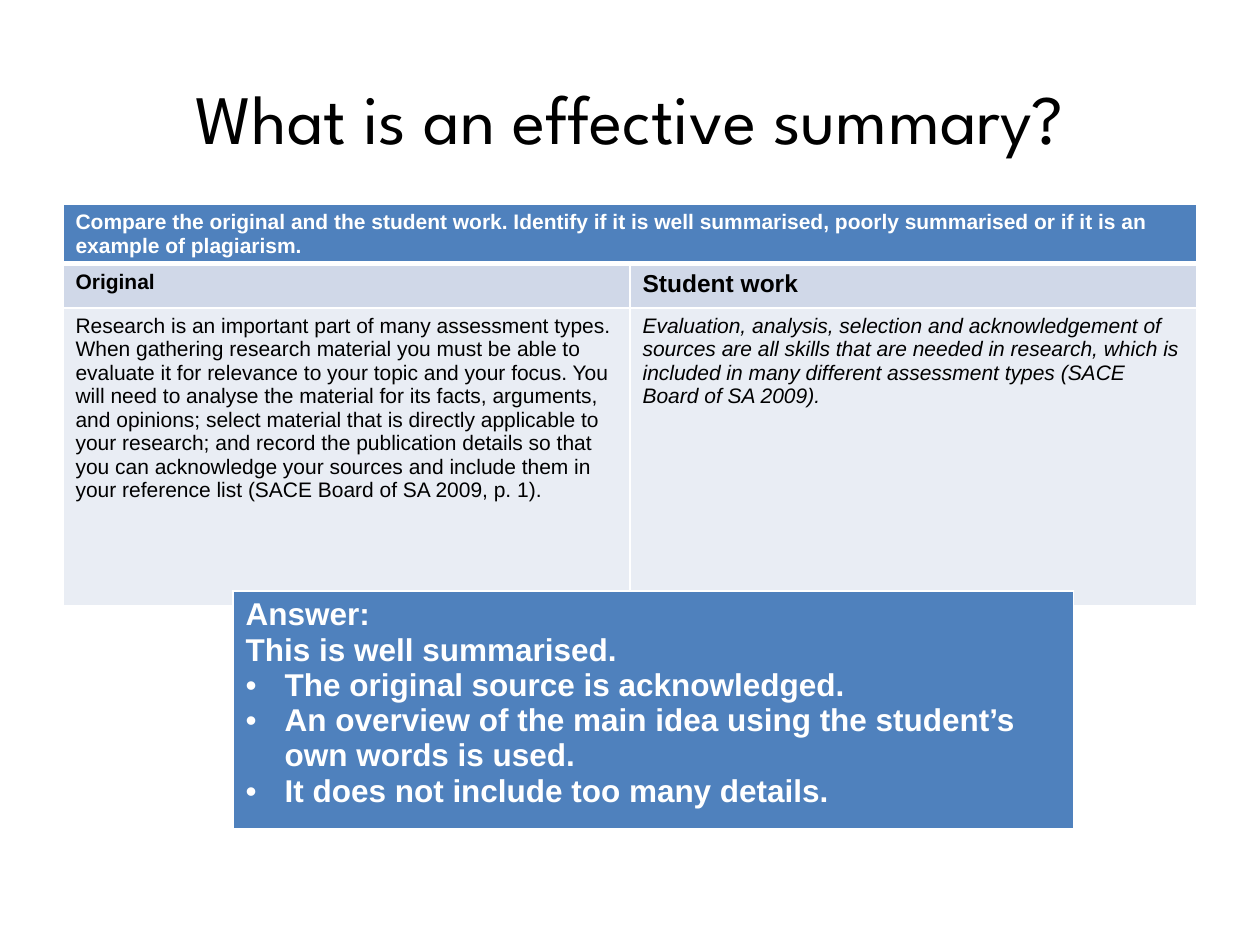
from lxml.etree import SubElement
from pptx import Presentation
from pptx.dml.color import RGBColor
from pptx.enum.text import MSO_ANCHOR as Anchor, PP_ALIGN as Align
from pptx.oxml.ns import qn
from pptx.util import Emu, Inches, Pt

COLORS = {"ink": "000000", "paper": "FFFFFF", "header": "4F81BD",
          "label": "D0D8E8", "body": "E9EDF4"}
CELL = Inches(0.1)
COLUMNS, ROWS = 100, 75

TITLE = "What is an effective summary?"
TASK = ("Compare the original and the student work. Identify if it is well summarised, "
        "poorly summarised or if it is an example of plagiarism.")
ORIGINAL = ("Research is an important part of many assessment types. When gathering research "
            "material you must be able to evaluate it for relevance to your topic and your focus. "
            "You will need to analyse the material for its facts, arguments, and opinions; select "
            "material that is directly applicable to your research; and record the publication "
            "details so that you can acknowledge your sources and include them in your reference "
            "list (SACE Board of SA 2009, p. 1).")
STUDENT_WORK = ("Evaluation, analysis, selection and acknowledgement of sources are all skills "
                "that are needed in research, which is included in many different assessment "
                "types (SACE Board of SA 2009).")
VERDICT = ["Answer:", "This is well summarised."]
REASONS = ["The original source is acknowledged.",
           "An overview of the main idea using the student’s own words is used.",
           "It does not include too many details."]


def grid(*units):
    """Turn grid units into slide lengths."""
    return [Emu(round(unit * CELL)) for unit in units]


def style_font(font, color, **values):
    """Apply format values and a named colour to a font."""
    for name, value in values.items():
        setattr(font, name, value)
    font.color.rgb = RGBColor.from_string(COLORS[color])


def add_bullet(paragraph):
    """Give a paragraph a hanging bullet."""
    properties = paragraph._p.get_or_add_pPr()
    properties.set("marL", str(Inches(0.31)))
    properties.set("indent", str(-Inches(0.31)))
    SubElement(properties, qn("a:buFont")).set("typeface", "Arial")
    SubElement(properties, qn("a:buChar")).set("char", "•")


def paint_cell(cell, fill, top=1, bottom=1):
    """Draw white borders around a cell and fill it."""
    properties = cell._tc.get_or_add_tcPr()
    for side, width in {"L": 1, "R": 1, "T": top, "B": bottom}.items():
        border = SubElement(properties, qn(f"a:ln{side}"), w=str(Pt(width)))
        SubElement(SubElement(border, qn("a:solidFill")), qn("a:srgbClr"), val=COLORS["paper"])
    cell.fill.solid()
    cell.fill.fore_color.rgb = RGBColor.from_string(COLORS[fill])


def add_plain_table(slide, box, row_heights, column_count):
    """Add a table without banding, with equal columns and the given rows."""
    table = slide.shapes.add_table(len(row_heights), column_count, *grid(*box)).table
    table.first_row = table.horz_banding = False
    for row, height in zip(table.rows, grid(*row_heights)):
        row.height = height
    return table


def add_title(slide, box):
    """Place the centred slide title."""
    frame = slide.shapes.add_textbox(*grid(*box)).text_frame
    frame.word_wrap = True
    frame.vertical_anchor = Anchor.MIDDLE
    heading = frame.paragraphs[0]
    heading.text = TITLE
    heading.alignment = Align.CENTER
    style_font(heading.font, "ink", name="League Spartan", size=Pt(39.6))


def add_comparison(slide, box):
    """Place the task above the original and the student work."""
    table = add_plain_table(slide, box, [4.4, 3.5, box[3] - 7.9], 2)
    bold, plain = {"bold": True}, {"bold": False}
    content = [
        ("header", "paper", 1, 3, [(TASK, 12, bold), ("", 12, bold)]),
        ("label", "ink", 3, 1, [("Original", 12, bold), ("Student work", 14, bold)]),
        ("body", "ink", 1, 1, [(ORIGINAL, 12, plain),
                               (STUDENT_WORK, 12, {**plain, "italic": True})]),
    ]
    for row, (fill, ink, top, bottom, entries) in enumerate(content):
        for column, (wording, size, emphasis) in enumerate(entries):
            cell = table.cell(row, column)
            paint_cell(cell, fill, top, bottom)
            cell.text = wording
            style_font(cell.text_frame.paragraphs[0].font, ink,
                       name="Arial", size=Pt(size), **emphasis)
    table.cell(0, 0).merge(table.cell(0, 1))


def add_answer(slide, box):
    """Place the answer with its bulleted reasons."""
    cell = add_plain_table(slide, box, [box[3]], 1).cell(0, 0)
    paint_cell(cell, "header", bottom=3)
    cell.text = "\n".join(VERDICT + REASONS)
    lines = cell.text_frame.paragraphs
    for reason in lines[len(VERDICT):]:
        add_bullet(reason)
    for line in lines:
        style_font(line.font, "paper", name="Arial", size=Pt(18), bold=True)


def main():
    """Build and save the slide."""
    deck = Presentation()
    deck.slide_width, deck.slide_height = grid(COLUMNS, ROWS)
    slide = deck.slides.add_slide(deck.slide_layouts[6])
    add_comparison(slide, (5, 16.2, 90, 31.5))
    add_title(slide, (5, 3, 90, 12.5))
    add_answer(slide, (18.5, 46.9, 66.7, 18.1))
    deck.save("out.pptx")


if __name__ == "__main__":
    main()
